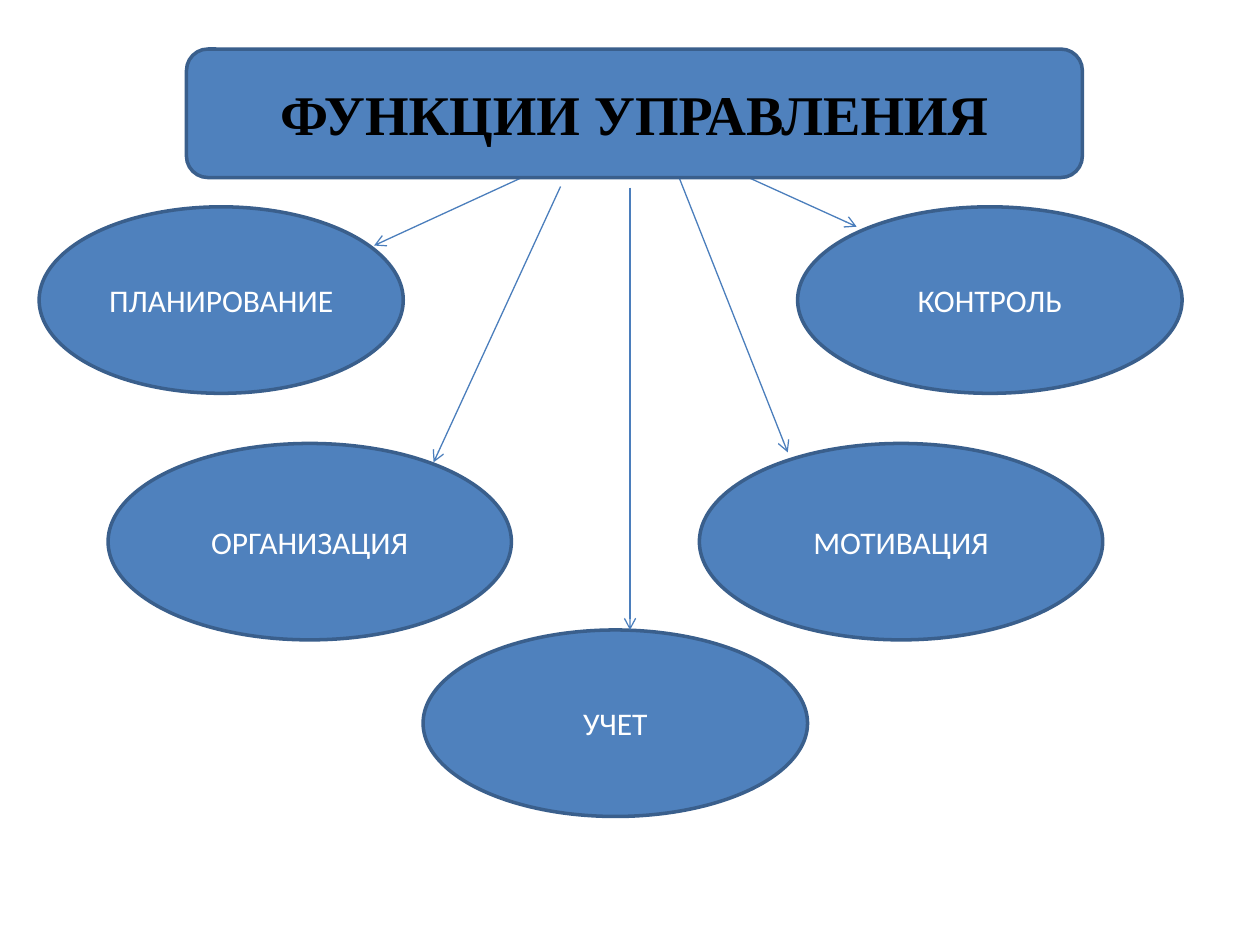
"""Build a slide showing the five functions of management."""
from dataclasses import dataclass

from lxml.etree import SubElement
from pptx import Presentation
from pptx.dml.color import RGBColor
from pptx.enum.shapes import MSO_CONNECTOR as Connector, MSO_SHAPE as Preset
from pptx.enum.text import MSO_ANCHOR as Anchor, PP_ALIGN as Align
from pptx.oxml.ns import qn
from pptx.slide import Slide
from pptx.util import Cm, Pt


@dataclass(frozen=True)
class TextStyle:
    font: str
    size: float
    color: RGBColor
    bold: bool = False


@dataclass(frozen=True)
class Theme:
    fill: RGBColor = RGBColor(0x4F, 0x81, 0xBD)
    outline: RGBColor = RGBColor(0x3A, 0x5F, 0x8C)
    arrow: RGBColor = RGBColor(0x4B, 0x7E, 0xBC)
    outline_width: float = 2
    arrow_width: float = 0.75
    title: TextStyle = TextStyle("Times New Roman", 32, RGBColor(0, 0, 0), True)
    label: TextStyle = TextStyle("Calibri", 18, RGBColor(0xFF, 0xFF, 0xFF))


@dataclass(frozen=True)
class Block:
    text: str
    left: float
    top: float
    width: float
    height: float


@dataclass(frozen=True)
class Arrow:
    start: tuple[float, float]
    end: tuple[float, float]


THEME = Theme()
TITLE = Block("ФУНКЦИИ УПРАВЛЕНИЯ", 3.76, 0.99, 18.06, 2.59)
FUNCTIONS = (
    Block("ПЛАНИРОВАНИЕ", 0.79, 4.17, 7.34, 3.76),
    Block("ОРГАНИЗАЦИЯ", 2.18, 8.94, 8.13, 3.96),
    Block("КОНТРОЛЬ", 16.08, 4.17, 7.75, 3.76),
    Block("МОТИВАЦИЯ", 14.1, 8.94, 8.13, 3.96),
    Block("УЧЕТ", 8.53, 12.7, 7.75, 3.76),
)
TITLE_BOTTOM = TITLE.top + TITLE.height
ARROWS = (
    Arrow((10.52, TITLE_BOTTOM), (7.54, 4.95)),
    Arrow((11.3, 3.76), (8.74, 9.32)),
    Arrow((15.09, TITLE_BOTTOM), (17.27, 4.57)),
    Arrow((13.69, TITLE_BOTTOM), (15.88, 9.12)),
    Arrow((12.7, 3.78), (12.7, 12.7)),
)


def draw_block(slide: Slide, block: Block, preset: Preset, style: TextStyle) -> None:
    shape = slide.shapes.add_shape(
        preset, Cm(block.left), Cm(block.top), Cm(block.width), Cm(block.height)
    )
    shape.shadow.inherit = False
    shape.fill.solid()
    shape.fill.fore_color.rgb = THEME.fill
    shape.line.color.rgb = THEME.outline
    shape.line.width = Pt(THEME.outline_width)
    shape.text_frame.word_wrap = True
    shape.text_frame.vertical_anchor = Anchor.MIDDLE
    paragraph = shape.text_frame.paragraphs[0]
    paragraph.alignment = Align.CENTER
    run = paragraph.add_run()
    run.text = block.text
    run.font.name = style.font
    run.font.size = Pt(style.size)
    run.font.bold = style.bold
    run.font.color.rgb = style.color


def draw_arrow(slide: Slide, arrow: Arrow) -> None:
    connector = slide.shapes.add_connector(
        Connector.STRAIGHT, *map(Cm, arrow.start + arrow.end)
    )
    connector.line.color.rgb = THEME.arrow
    connector.line.width = Pt(THEME.arrow_width)
    properties = connector.element.spPr
    SubElement(properties.find(qn("a:ln")), qn("a:tailEnd"), type="arrow")
    SubElement(properties, qn("a:effectLst"))


def main() -> None:
    presentation = Presentation()
    presentation.slide_width = Cm(25.4)
    presentation.slide_height = Cm(19.05)
    slide = presentation.slides.add_slide(presentation.slide_layouts[6])
    for function in FUNCTIONS:
        draw_block(slide, function, Preset.OVAL, THEME.label)
    for arrow in ARROWS:
        draw_arrow(slide, arrow)
    draw_block(slide, TITLE, Preset.ROUNDED_RECTANGLE, THEME.title)
    presentation.save("out.pptx")


if __name__ == "__main__":
    main()
